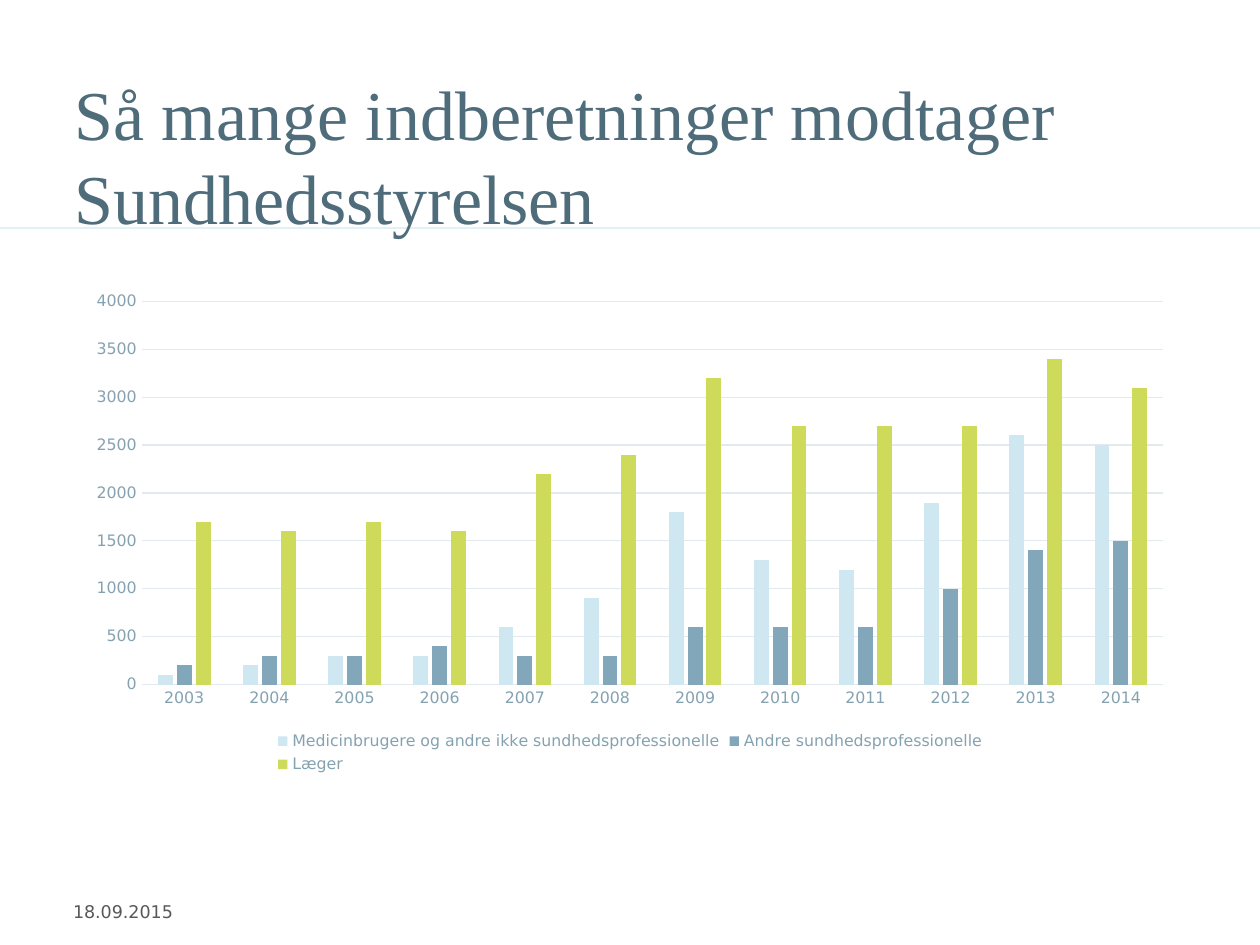
from pptx import Presentation
from pptx.chart.data import CategoryChartData
from pptx.dml.color import RGBColor
from pptx.enum.chart import XL_CHART_TYPE, XL_LEGEND_POSITION, XL_TICK_MARK
from pptx.enum.shapes import MSO_CONNECTOR
from pptx.enum.text import MSO_ANCHOR, PP_ALIGN
from pptx.oxml.ns import qn
from pptx.util import Inches, Pt
from lxml import etree

# Content
TITLE = "Så mange indberetninger modtager Sundhedsstyrelsen"
DATE = "18.09.2015"
YEARS = [str(year) for year in range(2003, 2015)]
LIGHT_BLUE = RGBColor(0xCE, 0xE7, 0xF0)
STEEL_BLUE = RGBColor(0x82, 0xA6, 0xBA)
LIME = RGBColor(0xCE, 0xDA, 0x59)
SERIES = [
    ("Medicinbrugere og andre ikke sundhedsprofessionelle", LIGHT_BLUE,
     (100, 200, 300, 300, 600, 900, 1800, 1300, 1200, 1900, 2600, 2500)),
    ("Andre sundhedsprofessionelle", STEEL_BLUE,
     (200, 300, 300, 400, 300, 300, 600, 600, 600, 1000, 1400, 1500)),
    ("Læger", LIME,
     (1700, 1600, 1700, 1600, 2200, 2400, 3200, 2700, 2700, 2700, 3400, 3100)),
]

# Formats
SLATE = RGBColor(0x4F, 0x6C, 0x7B)
LABEL = RGBColor(0x85, 0xA2, 0xB1)
GRID = RGBColor(0xE3, 0xEA, 0xED)
RULE = RGBColor(0xE2, 0xF1, 0xF6)
GREY = RGBColor(0x58, 0x58, 0x58)
SANS = "DejaVu Sans"
TITLE_FONT = {"name": "Times New Roman", "size": Pt(40), "color": SLATE}
DATE_FONT = {"name": SANS, "size": Pt(10), "color": GREY}
CHART_FONT = {"name": SANS, "size": Pt(10), "color": SLATE}
LABEL_FONT = {"name": SANS, "size": Pt(9), "color": LABEL}
LEFT, WIDTH = Inches(0.59), Inches(8.82)


def set_font(font, formats):
    for name, value in formats.items():
        if name == "color":
            font.color.rgb = value
        else:
            setattr(font, name, value)


def set_line(line, color, width):
    line.color.rgb = color
    line.width = width


def fill_text(shape, text, formats, wrap, top=0):
    tf = shape.text_frame
    for name, value in {"margin_left": 0, "margin_right": 0, "margin_top": top,
                        "margin_bottom": 0, "word_wrap": wrap,
                        "vertical_anchor": MSO_ANCHOR.TOP}.items():
        setattr(tf, name, value)
    p = tf.paragraphs[0]
    p.alignment = PP_ALIGN.LEFT
    r = p.add_run()
    r.text = text
    set_font(r.font, formats)
    return p


prs = Presentation()
prs.slide_width, prs.slide_height = Inches(10), Inches(7.5)
s = prs.slides.add_slide(prs.slide_layouts[5])

# Rule under the title, behind the text
rule = s.shapes.add_connector(MSO_CONNECTOR.STRAIGHT, 0, Inches(1.81),
                              prs.slide_width, Inches(1.81))
set_line(rule.line, RULE, Pt(1))
etree.SubElement(rule._element.spPr, qn("a:effectLst"))
s.shapes._spTree.insert(2, rule._element)

# Title
title = s.shapes.title
title.left, title.top = LEFT, Inches(0.53)
title.width, title.height = WIDTH, Inches(1.15)
p = fill_text(title, TITLE, TITLE_FONT, True, Inches(0.04))
p.line_spacing = Pt(47.5)

# Date
date = s.shapes.add_textbox(Inches(0.58), Inches(7.15), Inches(2.33), Inches(0.19))
fill_text(date, DATE, DATE_FONT, False)

# Chart
data = CategoryChartData(number_format="0")
data.categories = YEARS
for name, _, values in SERIES:
    data.add_series(name, values)
chart = s.shapes.add_chart(XL_CHART_TYPE.COLUMN_CLUSTERED, LEFT, Inches(2.24),
                           WIDTH, Inches(3.94), data).chart
set_font(chart.font, CHART_FONT)
chart.has_title = False
chart.has_legend = True
chart.legend.position = XL_LEGEND_POSITION.BOTTOM
chart.legend.include_in_layout = False
set_font(chart.legend.font, LABEL_FONT)

plot = chart.plots[0]
plot.gap_width, plot.overlap, plot.vary_by_categories = 219, -27, False
for series, (_, color, _) in zip(plot.series, SERIES):
    series.format.fill.solid()
    series.format.fill.fore_color.rgb = color

# Axes
for axis in (chart.category_axis, chart.value_axis):
    axis.major_tick_mark = axis.minor_tick_mark = XL_TICK_MARK.NONE
    set_font(axis.tick_labels.font, LABEL_FONT)
set_line(chart.category_axis.format.line, GRID, Pt(0.75))
value_axis = chart.value_axis
value_axis.minimum_scale, value_axis.maximum_scale, value_axis.major_unit = 0, 4000, 500
value_axis.format.line.fill.background()
set_line(value_axis.major_gridlines.format.line, GRID, Pt(0.75))

prs.save("out.pptx")
